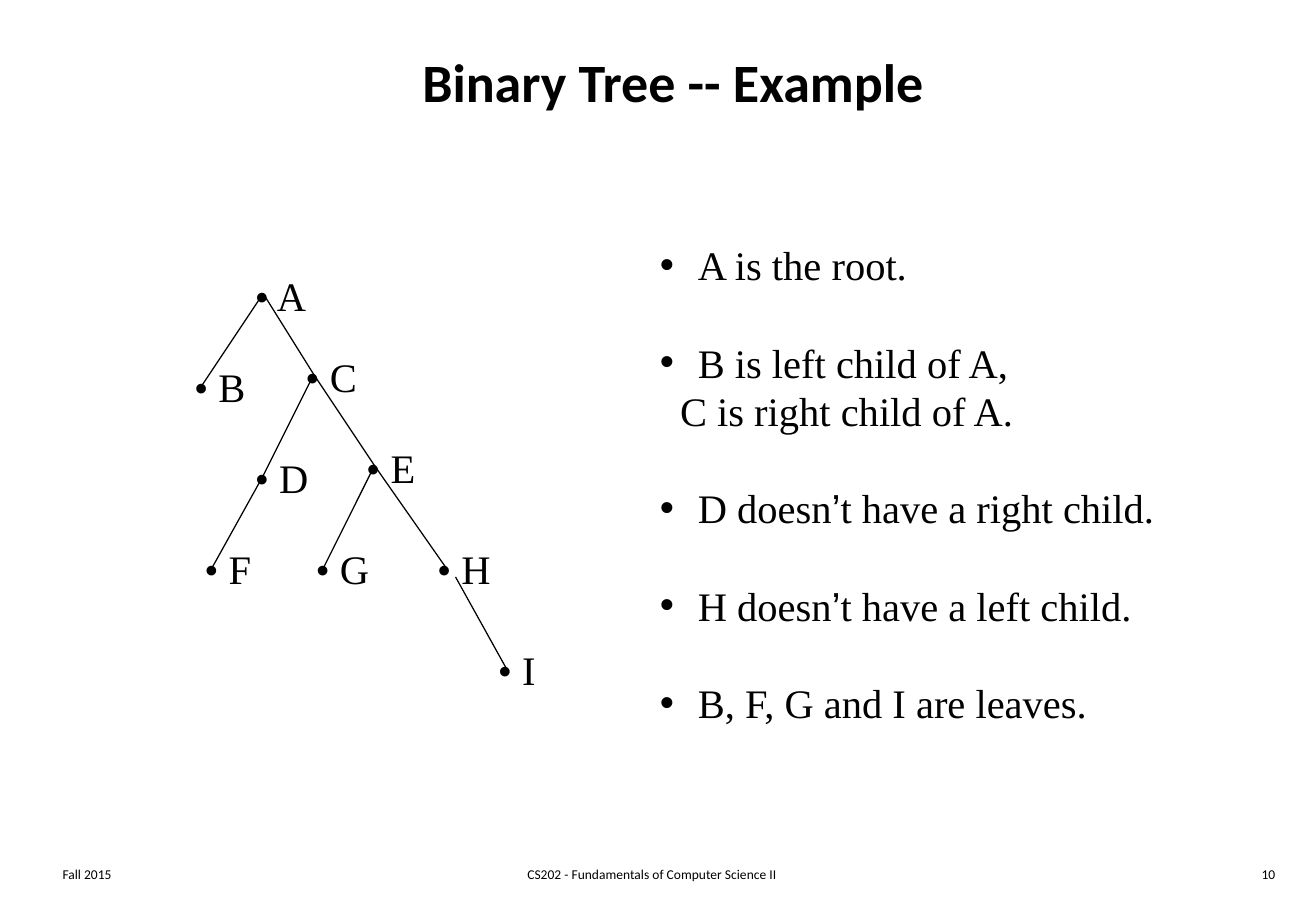
from lxml.etree import SubElement
from pptx import Presentation
from pptx.dml.color import RGBColor
from pptx.enum.shapes import MSO_CONNECTOR
from pptx.enum.text import MSO_ANCHOR, PP_ALIGN
from pptx.oxml.ns import qn
from pptx.util import Pt

BLACK = "000000"
SERIF = "Times New Roman"
LINE_PITCH = 28.8

NODES = {
    "A": (156, 174), "B": (120, 228), "C": (186, 222),
    "D": (156, 282), "E": (222, 276), "F": (126, 336),
    "G": (192, 336), "H": (264, 336), "I": (300, 396),
}
EDGES = ["AB", "AC", "CD", "CE", "DF", "EG", "EH", "HI"]
EDGE_STARTS = {"HI": (270, 342)}

FACTS = [
    ["A is the root."],
    ["B is left child of A,", "C is right child of A."],
    ["D doesn’t have a right child."],
    ["H doesn’t have a left child."],
    ["B, F, G and I are leaves."],
]


def color(value):
    return RGBColor.from_string(value)


def write(paragraph, text, size=24, font=SERIF, bold=False,
          align=PP_ALIGN.LEFT, pitch=None, before=0):
    paragraph.alignment = align
    paragraph.space_before = Pt(before)
    if pitch:
        paragraph.line_spacing = Pt(pitch)
    for part in text.replace("’", "|’|").split("|"):
        run = paragraph.add_run()
        run.text = part
        run.font.size = Pt(size)
        run.font.name = "Arial" if part == "’" else font
        run.font.bold = bold
        run.font.color.rgb = color(BLACK)


def add_frame(slide, left, top, width, height, inset=3.6, anchor=MSO_ANCHOR.TOP):
    box = slide.shapes.add_textbox(Pt(left), Pt(top), Pt(width), Pt(height))
    frame = box.text_frame
    frame.word_wrap = True
    frame.margin_top = Pt(inset)
    frame.margin_bottom = Pt(3.6)
    frame.vertical_anchor = anchor
    return frame


def set_indent(paragraph, margin, bullet=False):
    properties = paragraph._p.get_or_add_pPr()
    properties.set("marL", str(Pt(margin)))
    properties.set("indent", str(Pt(-margin if bullet else 0)))
    if bullet:
        SubElement(properties, qn("a:buFont")).set("typeface", "Arial")
        SubElement(properties, qn("a:buChar")).set("char", "•")


def add_edge(slide, start, end):
    edge = slide.shapes.add_connector(
        MSO_CONNECTOR.STRAIGHT, *(Pt(value) for value in (*start, *end)))
    edge.line.color.rgb = color(BLACK)
    edge.line.width = Pt(0.75)
    SubElement(edge._element.spPr, qn("a:effectLst"))


def add_tree(slide):
    for edge in EDGES:
        parent, child = edge
        add_edge(slide, EDGE_STARTS.get(edge, NODES[parent]), NODES[child])
    for letter, (x, y) in NODES.items():
        frame = add_frame(slide, x - 12, y - 18, 50, 36, inset=4.6)
        write(frame.paragraphs[0], f"• {letter}", pitch=LINE_PITCH)


def add_facts(slide):
    frame = add_frame(slide, 384, 138, 320, 327, inset=4.6)
    paragraph = frame.paragraphs[0]
    for fact_index, fact in enumerate(FACTS):
        for line_index, line in enumerate(fact):
            leads = line_index == 0
            if fact_index or line_index:
                paragraph = frame.add_paragraph()
            write(paragraph, line, pitch=LINE_PITCH,
                  before=LINE_PITCH if leads and fact_index else 0)
            set_indent(paragraph, 22.5 if leads else 12, bullet=leads)


def add_footer(slide):
    for text, left, width, align in [
        ("Fall 2015", 30, 163, PP_ALIGN.LEFT),
        ("CS202 - Fundamentals of Computer Science II", 240.5, 292, PP_ALIGN.CENTER),
        ("10", 600, 163, PP_ALIGN.RIGHT),
    ]:
        frame = add_frame(slide, left, 510, width, 18)
        write(frame.paragraphs[0], text, size=8, font="Calibri", align=align)


def main():
    deck = Presentation()
    deck.slide_width, deck.slide_height = Pt(780), Pt(540)
    slide = deck.slides.add_slide(deck.slide_layouts[6])
    add_footer(slide)
    title = add_frame(slide, 30, 12, 738, 72, anchor=MSO_ANCHOR.MIDDLE)
    write(title.paragraphs[0], "Binary Tree -- Example", size=32,
          font="Calibri", bold=True, align=PP_ALIGN.CENTER)
    add_tree(slide)
    add_facts(slide)
    deck.save("out.pptx")


if __name__ == "__main__":
    main()
